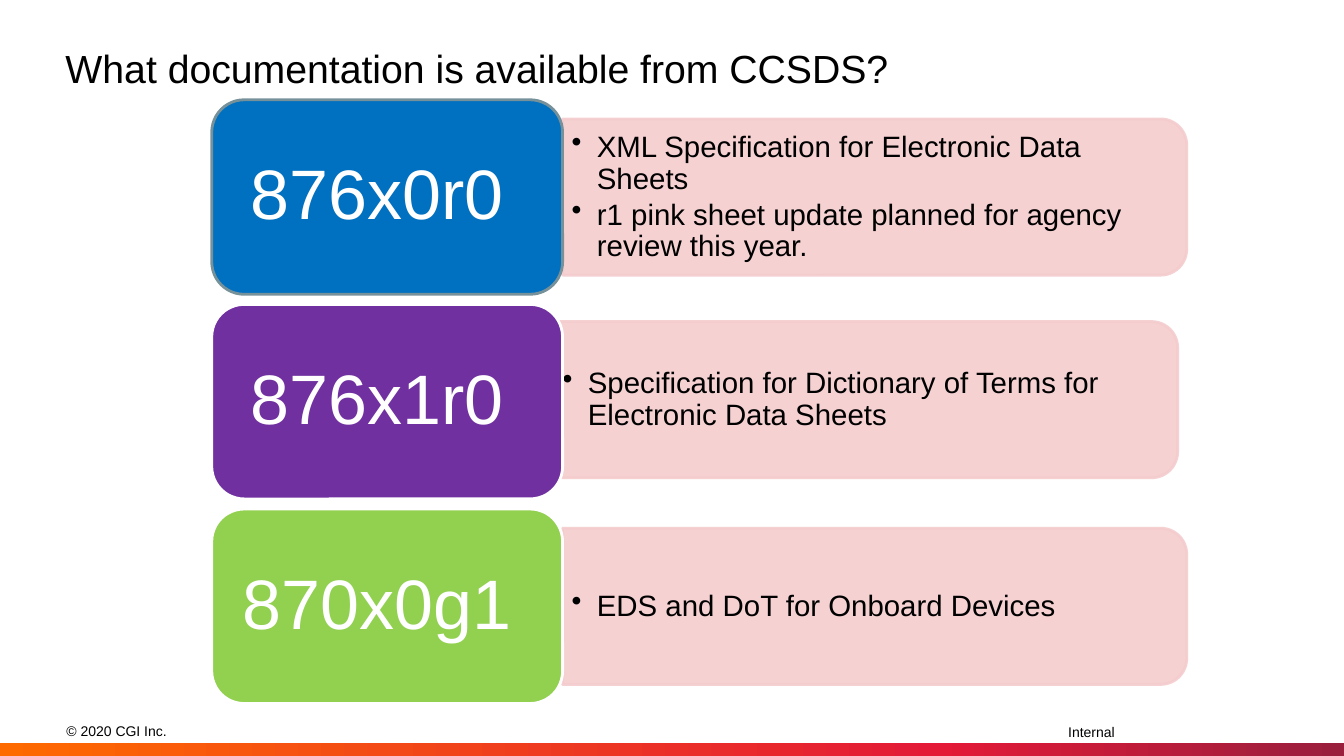
from copy import deepcopy
from dataclasses import dataclass

from lxml import etree
from pptx import Presentation
from pptx import util as u
from pptx.dml.color import RGBColor
from pptx.enum import shapes, text
from pptx.oxml.ns import qn

PX = 9144


@dataclass(frozen=True)
class Theme:
    font: str = "Arial"
    ink: str = "000000"
    white: str = "FFFFFF"
    pink: str = "F4CCCE"
    grey: str = "77919A"
    blue: str = "0070C0"
    purple: str = "7030A0"
    green: str = "92D050"
    bar: tuple = ((0, "991F3D"), (0.3, "E31937"), (1, "FF6A00"))
    title: int = 28
    code: int = 50
    body: int = 21
    foot: int = 10
    edge: int = 2


T = Theme()
ROWS = (
    ("876x0r0 ", T.blue, T.grey, (348, 19),
     ("XML Specification for Electronic Data Sheets",
      "r1 pink sheet update planned for agency review this year.")),
    ("876x1r0 ", T.purple, T.white, (339, 17),
     ("Specification for Dictionary of Terms for Electronic Data Sheets",)),
    ("870x0g1 ", T.green, T.white, (348, 19),
     ("EDS and DoT for Onboard Devices",)),
)


def px(*nums):
    return [u.Emu(n * PX) for n in nums]


def rgb(hue):
    return RGBColor.from_string(hue)


def shape(slide, kind, box, fill=None, line=None):
    item = slide.shapes.add_shape(kind, *px(*box))
    item.shadow.inherit = False
    if fill:
        item.fill.solid()
        item.fill.fore_color.rgb = rgb(fill)
    if line:
        item.line.color.rgb = rgb(line)
        item.line.width = u.Pt(T.edge)
    else:
        item.line.fill.background()
    return item


def write(slide, box, lines, size, hue=T.ink, pad=(0, 0), wrap=True,
          anchor=text.MSO_ANCHOR.TOP, align=text.PP_ALIGN.LEFT, lead=1.0):
    frame = slide.shapes.add_textbox(*px(*box)).text_frame
    frame.word_wrap = wrap
    frame.vertical_anchor = anchor
    frame.margin_left = frame.margin_right = px(pad[0])[0]
    frame.margin_top = frame.margin_bottom = px(pad[1])[0]
    for i, words in enumerate(lines):
        para = frame.paragraphs[0] if i == 0 else frame.add_paragraph()
        para.alignment = align
        para.line_spacing = lead
        run = para.add_run()
        run.text = words
        run.font.name = T.font
        run.font.size = u.Pt(size)
        run.font.color.rgb = rgb(hue)
    return frame


def bullet(para):
    para.space_after = u.Pt(3)
    props = para._p.get_or_add_pPr()
    props.set("marL", str(25 * PX))
    props.set("indent", str(-25 * PX))
    etree.SubElement(props, qn("a:buChar")).set("char", "•")


def panel(slide, box, lines):
    x, y, w, h = box
    half = (w - h) // 2
    item = shape(slide, shapes.MSO_SHAPE.ROUND_2_SAME_RECTANGLE,
                 (x + half, y - half, h, w), T.pink, T.pink)
    item.rotation = 90
    for tint in item._element.spPr.iter(qn("a:srgbClr")):
        etree.SubElement(tint, qn("a:alpha")).set("val", "90000")
    frame = write(slide, (x, y + 8, w - 7, h - 15), lines, T.body,
                  pad=(9, 4), anchor=text.MSO_ANCHOR.MIDDLE, lead=0.9)
    for para in frame.paragraphs:
        bullet(para)


def tile(slide, box, code, fill, line):
    x, y, w, h = box
    shape(slide, shapes.MSO_SHAPE.ROUNDED_RECTANGLE, box, fill, line)
    write(slide, (x + 9, y + 9, w - 18, h - 18), [code], T.code, T.white,
          pad=(21, 10), anchor=text.MSO_ANCHOR.MIDDLE,
          align=text.PP_ALIGN.CENTER, lead=0.9)


def stack(slide, box):
    x, y, w, h = box
    step = h // len(ROWS)
    for i, (code, fill, line, (dx, dy), lines) in enumerate(ROWS):
        top = y + i * step
        panel(slide, (x + dx, top + dy, w - 348, 155), lines)
        tile(slide, (x, top, 348, step - 10), code, fill, line)


def footer(slide, box):
    x, y, w, h = box
    bar = shape(slide, shapes.MSO_SHAPE.RECTANGLE, (x, y + h - 13, w, 13))
    bar.fill.gradient()
    bar.fill.gradient_angle = 180
    stops = next(bar._element.spPr.iter(qn("a:gsLst")))
    stops.insert(1, deepcopy(stops[0]))
    for stop, (pos, hue) in zip(bar.fill.gradient_stops, T.bar):
        stop.position = pos
        stop.color.rgb = rgb(hue)
    write(slide, (x + 66, y, 210, 19), ["© 2020 CGI Inc."], T.foot,
          wrap=False, anchor=text.MSO_ANCHOR.MIDDLE)
    write(slide, (x + 1004, y + 2, 157, 19), ["Internal"], T.foot,
          align=text.PP_ALIGN.CENTER)


def main():
    deck = Presentation()
    deck.slide_width, deck.slide_height = px(1333, 750)
    slide = deck.slides.add_slide(deck.slide_layouts[6])
    footer(slide, (0, 716, 1333, 34))
    write(slide, (65, 44, 1200, 102),
          ["What documentation is available from CCSDS?"], T.title)
    stack(slide, (210, 99, 967, 609))
    deck.save("out.pptx")


if __name__ == "__main__":
    main()
